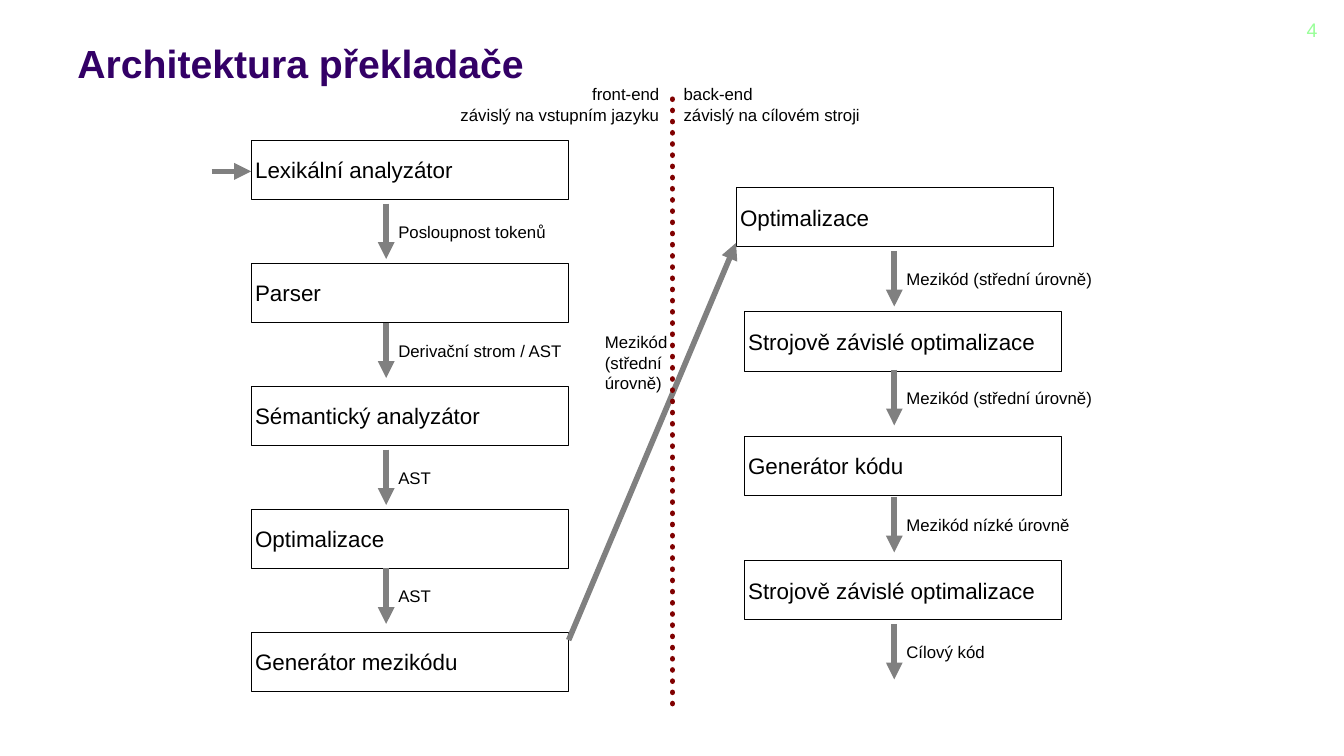
from dataclasses import dataclass

from lxml import etree
from pptx import Presentation
from pptx.dml.color import RGBColor
from pptx.enum.dml import MSO_LINE
from pptx.enum.shapes import MSO_CONNECTOR, MSO_SHAPE
from pptx.enum.text import MSO_ANCHOR, PP_ALIGN
from pptx.oxml.ns import qn
from pptx.util import Inches, Pt

STRAIGHT = MSO_CONNECTOR.STRAIGHT
RECTANGLE = MSO_SHAPE.RECTANGLE
ROUND_DOT = MSO_LINE.ROUND_DOT
TOP, MIDDLE, BOTTOM = MSO_ANCHOR.TOP, MSO_ANCHOR.MIDDLE, MSO_ANCHOR.BOTTOM
LEFT, RIGHT = PP_ALIGN.LEFT, PP_ALIGN.RIGHT


@dataclass(frozen=True)
class Theme:
    font: str = "Arial"
    title_color: str = "330066"
    number_color: str = "99FF99"
    text_color: str = "000000"
    box_fill: str = "FFFFFF"
    arrow_color: str = "808080"
    divider_color: str = "800000"
    title_size: int = 28
    number_size: int = 14
    stage_size: int = 16
    label_size: int = 12
    border_width: float = 0.75
    line_width: int = 4


THEME = Theme()

TITLE = "Architektura překladače"
SLIDE_NUMBER = "4 "
BRIDGE_LABEL = "Mezikód (střední úrovně)"

# Half headings: lines, left, width, alignment
HEADINGS = [
    (["front-end", "závislý na vstupním jazyku"], 4.38, 2.2, RIGHT),
    (["back-end", "závislý na cílovém stroji"], 6.74, 2.05, LEFT),
]

# Stages: name, left. Outputs: label, top of the arrow.
FRONT_END = {
    "top": 1.39, "pitch": 1.22, "arrow_x": 3.83, "label_width": 1.81,
    "stages": [("Lexikální analyzátor", 2.49), ("Parser", 2.49),
               ("Sémantický analyzátor", 2.49), ("Optimalizace", 2.49),
               ("Generátor mezikódu", 2.49)],
    "outputs": [("Posloupnost tokenů", 2.02), ("Derivační strom / AST", 3.2),
                ("AST", 4.46), ("AST", 5.64)],
}
BACK_END = {
    "top": 1.86, "pitch": 1.233, "arrow_x": 8.87, "label_width": 2.36,
    "stages": [("Optimalizace", 7.3), ("Strojově závislé optimalizace", 7.38),
               ("Generátor kódu", 7.38),
               ("Strojově závislé optimalizace", 7.38)],
    "outputs": [("Mezikód (střední úrovně)", 2.49),
                ("Mezikód (střední úrovně)", 3.67),
                ("Mezikód nízké úrovně", 4.93), ("Cílový kód", 6.19)],
}

STAGE_WIDTH, STAGE_HEIGHT = 3.15, 0.59
ARROW_LENGTH = 0.55
LABEL_GAP, LABEL_HEIGHT = 0.08, 0.39
TIGHT_INSET = 0.04

INPUT_ARROW = ((2.1, 1.7), (2.49, 1.7))
BRIDGE_ARROW = ((5.64, 6.35), (7.3, 2.41))
DIVIDER = ((6.67, 6.98), (6.67, 0.91))


def write(shape, lines, size, color=THEME.text_color, align=LEFT,
          anchor=MIDDLE, inset=TIGHT_INSET, bold=False):
    frame = shape.text_frame
    frame.word_wrap = True
    frame.vertical_anchor = anchor
    if inset is not None:
        frame.margin_left = frame.margin_right = Inches(inset)
        frame.margin_top = frame.margin_bottom = Inches(inset)
    frame.text = "\n".join(lines)
    for paragraph in frame.paragraphs:
        paragraph.alignment = align
        for run in paragraph.runs:
            run.font.name = THEME.font
            run.font.size = Pt(size)
            run.font.bold = bold
            run.font.color.rgb = RGBColor.from_string(color)


def add_text(slide, box, lines, size, **style):
    shape = slide.shapes.add_textbox(*map(Inches, box))
    write(shape, lines, size, **style)


def add_stage(slide, name, left, top):
    box = (left, top, STAGE_WIDTH, STAGE_HEIGHT)
    shape = slide.shapes.add_shape(RECTANGLE, *map(Inches, box))
    shape.shadow.inherit = False
    shape.fill.solid()
    shape.fill.fore_color.rgb = RGBColor.from_string(THEME.box_fill)
    shape.line.color.rgb = RGBColor.from_string(THEME.text_color)
    shape.line.width = Pt(THEME.border_width)
    write(shape, [name], THEME.stage_size)


def add_line(slide, start, end, color):
    connector = slide.shapes.add_connector(
        STRAIGHT, *map(Inches, (*start, *end)))
    connector.line.color.rgb = RGBColor.from_string(color)
    connector.line.width = Pt(THEME.line_width)
    etree.SubElement(connector._element.spPr, qn("a:effectLst"))
    return connector


def add_arrow(slide, start, end):
    connector = add_line(slide, start, end, THEME.arrow_color)
    outline = connector.line._get_or_add_ln()
    etree.SubElement(outline, qn("a:tailEnd"), type="triangle")


def add_divider(slide):
    connector = add_line(slide, *DIVIDER, THEME.divider_color)
    connector.line.dash_style = ROUND_DOT
    connector.line._get_or_add_ln().set("cap", "rnd")


def add_pipeline(slide, half):
    """Draw one column of stages with the arrows and labels between them."""
    for index, (name, left) in enumerate(half["stages"]):
        add_stage(slide, name, left, half["top"] + index * half["pitch"])
    x = half["arrow_x"]
    for label, top in half["outputs"]:
        add_arrow(slide, (x, top), (x, top + ARROW_LENGTH))
        box = (x + LABEL_GAP, top + LABEL_GAP,
               half["label_width"], LABEL_HEIGHT)
        add_text(slide, box, [label], THEME.label_size)


def main():
    presentation = Presentation()
    presentation.slide_width = Inches(13.33)
    presentation.slide_height = Inches(7.5)
    slide = presentation.slides.add_slide(presentation.slide_layouts[6])

    add_text(slide, (0.67, 0.13, 11, 0.78), [TITLE], THEME.title_size,
             color=THEME.title_color, anchor=BOTTOM, inset=None, bold=True)
    add_text(slide, (12.49, 0.13, 0.73, 0.5), [SLIDE_NUMBER],
             THEME.number_size, color=THEME.number_color, align=RIGHT,
             anchor=TOP, inset=None)

    for half in (FRONT_END, BACK_END):
        add_pipeline(slide, half)
    for start, end in (INPUT_ARROW, BRIDGE_ARROW):
        add_arrow(slide, start, end)
    add_text(slide, (5.96, 3.28, 1.1, 0.63), [BRIDGE_LABEL],
             THEME.label_size)

    add_divider(slide)
    for lines, left, width, align in HEADINGS:
        add_text(slide, (left, 0.84, width, LABEL_HEIGHT), lines,
                 THEME.label_size, align=align)

    presentation.save("out.pptx")


if __name__ == "__main__":
    main()
